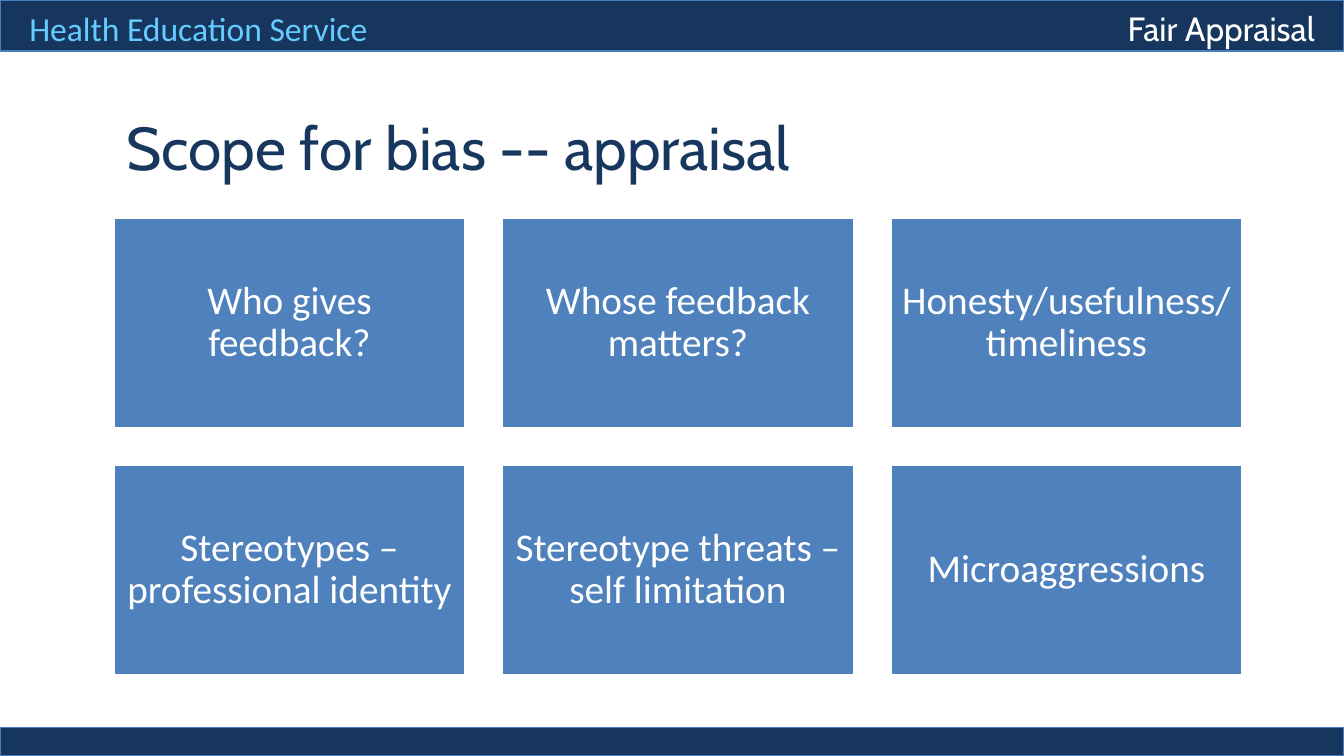
import pptx
import pptx.util
import pptx.dml.color
import pptx.enum.shapes
import pptx.enum.text

Pt = pptx.util.Pt
ALIGN = pptx.enum.text.PP_ALIGN
ANCHOR = pptx.enum.text.MSO_ANCHOR

COLORS = {
    "navy": "17365E", "bar edge": "4B7EBC", "sky": "66CCFF",
    "title": "17375E", "tile": "4F81BD", "white": "FFFFFF",
}


def rgb(name):
    return pptx.dml.color.RGBColor.from_string(COLORS[name])


def write(frame, text, font, size, color, align):
    """Put one formatted run into the first paragraph of a text frame."""
    frame.word_wrap = True
    paragraph = frame.paragraphs[0]
    paragraph.alignment = align
    run = paragraph.add_run()
    run.text = text
    run.font.name = font
    run.font.size = Pt(size)
    run.font.color.rgb = rgb(color)
    return paragraph


deck = pptx.Presentation()
deck.slide_width = Pt(720)
deck.slide_height = Pt(405)
slide = deck.slides.add_slide(deck.slide_layouts[6])

# Header and footer bars, then the tiles in a grid of three columns
TILE_WIDTH, TILE_HEIGHT = 189.2, 113.5
TOPICS = [
    "Who gives feedback?",
    "Whose feedback matters?",
    "Honesty/usefulness/ timeliness",
    "Stereotypes – professional identity",
    "Stereotype threats – self limitation",
    "Microaggressions",
]
blocks = [
    (0, 0, 720, 27.4, "navy", "bar edge", 0.75, None),
    (0, 389.6, 720, 15.4, "navy", "bar edge", 0.75, None),
]
for index, topic in enumerate(TOPICS):
    row, column = divmod(index, 3)
    blocks.append((60.5 + column * 208.1, 116.2 + row * 132.4,
                   TILE_WIDTH, TILE_HEIGHT, "tile", "white", 2, topic))

for left, top, width, height, fill, edge, edge_width, topic in blocks:
    block = slide.shapes.add_shape(
        pptx.enum.shapes.MSO_SHAPE.RECTANGLE,
        Pt(left), Pt(top), Pt(width), Pt(height))
    block.shadow.inherit = False
    block.fill.solid()
    block.fill.fore_color.rgb = rgb(fill)
    block.line.color.rgb = rgb(edge)
    block.line.width = Pt(edge_width)
    if topic:
        frame = block.text_frame
        frame.vertical_anchor = ANCHOR.MIDDLE
        frame.margin_left = frame.margin_right = Pt(6.3)
        frame.margin_top = frame.margin_bottom = Pt(6.3)
        write(frame, topic, "Calibri", 21, "white", ALIGN.CENTER).line_spacing = 0.9

# Header labels and title
LABELS = [
    (8.6, 0.7, 306, 29, "Health Education Service", "Calibri", 18, "sky", ALIGN.LEFT),
    (463, 0.7, 248.4, 29, "Fair Appraisal", "Cabin", 18, "white", ALIGN.RIGHT),
    (60.5, 55.5, 605, 41, "Scope for bias -- appraisal", "Cabin", 32.4, "title", ALIGN.LEFT),
]
for left, top, width, height, text, font, size, color, align in LABELS:
    label = slide.shapes.add_textbox(Pt(left), Pt(top), Pt(width), Pt(height))
    write(label.text_frame, text, font, size, color, align)

deck.save("out.pptx")
